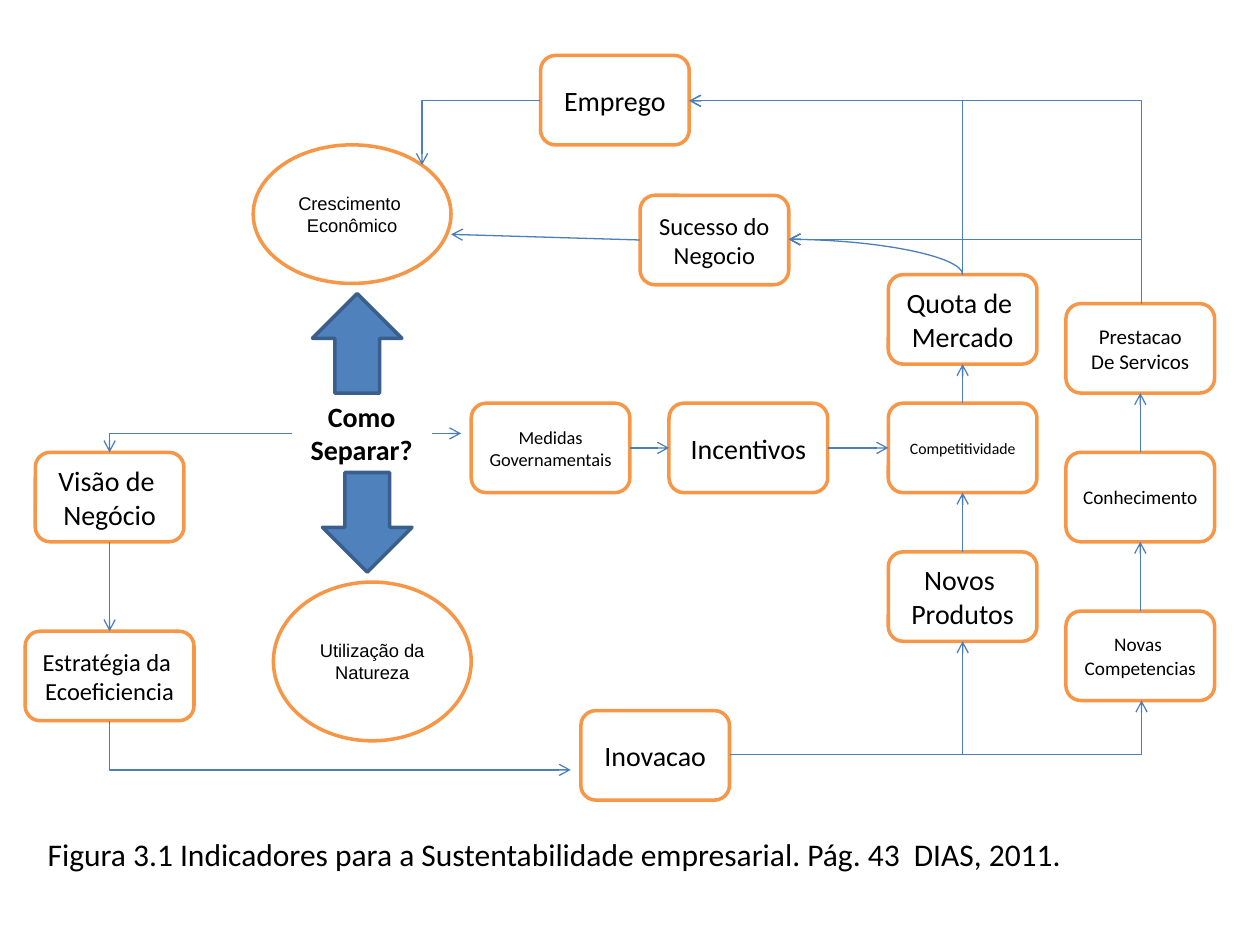
"""Build the slide of sustainability indicators as a flow diagram."""
import dataclasses
from typing import Optional

import lxml.etree
import pptx
import pptx.dml.color
import pptx.enum.shapes
import pptx.enum.text
import pptx.oxml.ns
import pptx.util

Inches = pptx.util.Inches
MSO_SHAPE = pptx.enum.shapes.MSO_SHAPE
MSO_CONNECTOR = pptx.enum.shapes.MSO_CONNECTOR
PP_ALIGN = pptx.enum.text.PP_ALIGN
MSO_ANCHOR = pptx.enum.text.MSO_ANCHOR
TOP, LEFT, BOTTOM, RIGHT = range(4)


@dataclasses.dataclass(frozen=True)
class Theme:
    """Colours, fonts, type sizes and line widths."""
    paper: str = "FFFFFF"
    ink: str = "000000"
    orange: str = "F79646"
    blue: str = "4F81BD"
    navy: str = "3A5F8C"
    link: str = "4B7EBC"
    body_font: str = "Calibri"
    oval_font: str = "Arial"
    caption: float = 18
    large: float = 16
    medium: float = 14
    regular: float = 12
    small: float = 11
    compact: float = 10.5
    tiny: float = 9
    outline: float = 2
    thin: float = 0.75


THEME = Theme()


@dataclasses.dataclass(frozen=True)
class Node:
    """An outlined shape with centred text."""
    text: str
    x: float
    y: float
    size: float = THEME.large
    w: float = 1.18
    h: float = 0.71
    kind: MSO_SHAPE = MSO_SHAPE.ROUNDED_RECTANGLE
    font: str = THEME.body_font


@dataclasses.dataclass(frozen=True)
class Link:
    """A straight arrow between two nodes or from a node to a point."""
    start: str
    start_side: int
    end: Optional[str] = None
    end_side: int = LEFT
    point: tuple[float, float] = (0, 0)


@dataclasses.dataclass(frozen=True)
class Bend:
    """An arrow with one corner, leaving vertically or horizontally."""
    x1: float
    y1: float
    x2: float
    y2: float
    vertical: bool = True
    preset: str = "bentConnector2"


COL_A, COL_B = 7.05, 8.46
MID_VISION, MID_A, MID_B = 0.87, 7.64, 9.06
ROW_JOB, ROW_SUCCESS, ROW_SPLIT, ROW_INNOVATION = 0.8, 1.9, 3.44, 5.99
SUCCESS_RIGHT, JOB_RIGHT, INNOVATION_RIGHT = 6.26, 5.47, 5.79

NODES = {
    "growth": Node("Crescimento \nEconômico", 2.01, 1.15, THEME.compact, 1.57, 1.1,
                   MSO_SHAPE.OVAL, THEME.oval_font),
    "nature": Node("Utilização da\nNatureza", 2.17, 4.62, THEME.compact, 1.57, 1.26,
                   MSO_SHAPE.OVAL, THEME.oval_font),
    "vision": Node("Visão de \nNegócio", 0.28, 3.59),
    "strategy": Node("Estratégia da \nEcoeficiencia", 0.2, 5.01, THEME.medium, 1.34),
    "innovation": Node("Inovacao", 4.61, 5.64),
    "incentives": Node("Incentivos", 5.31, 3.2, w=1.26),
    "measures": Node("Medidas\nGovernamentais", 3.74, 3.2, THEME.compact, 1.26),
    "products": Node("Novos \nProdutos", COL_A, 4.38),
    "share": Node("Quota de \nMercado", COL_A, 2.18),
    "competitiveness": Node("Competitividade", COL_A, 3.2, THEME.tiny),
    "services": Node("Prestacao\nDe Servicos", COL_B, 2.41, THEME.regular),
    "knowledge": Node("Conhecimento", COL_B, 3.59, THEME.small),
    "skills": Node("Novas \nCompetencias", COL_B, 4.85, THEME.small),
    "job": Node("Emprego", 4.29, 0.44),
    "success": Node("Sucesso do\nNegocio", 5.08, 1.55, THEME.medium),
}

LINKS = [
    Link("success", LEFT, point=(3.58, 1.86)),
    Link("measures", RIGHT, "incentives", LEFT),
    Link("incentives", RIGHT, "competitiveness", LEFT),
    Link("products", TOP, "competitiveness", BOTTOM),
    Link("competitiveness", TOP, "share", BOTTOM),
    Link("knowledge", TOP, "services", BOTTOM),
    Link("skills", TOP, "knowledge", BOTTOM),
    Link("vision", BOTTOM, "strategy", TOP),
]

BENDS = [
    Bend(MID_VISION, 5.72, 4.53, 6.11),
    Bend(INNOVATION_RIGHT, ROW_INNOVATION, MID_A, 5.09, False),
    Bend(INNOVATION_RIGHT, ROW_INNOVATION, MID_B, 5.56, False),
    Bend(MID_B, 2.41, JOB_RIGHT, ROW_JOB),
    Bend(MID_B, 2.41, SUCCESS_RIGHT, ROW_SUCCESS),
    Bend(MID_A, 2.18, SUCCESS_RIGHT, ROW_SUCCESS),
    Bend(4.29, ROW_JOB, 3.35, 1.31, False),
    Bend(2.32, ROW_SPLIT, MID_VISION, 3.59, False),
    Bend(MID_A, 2.18, JOB_RIGHT, ROW_JOB),
    Bend(MID_A, 2.18, SUCCESS_RIGHT, ROW_SUCCESS, preset="curvedConnector2"),
]


def rgb(code: str) -> pptx.dml.color.RGBColor:
    """Turn a hex code into a colour."""
    return pptx.dml.color.RGBColor.from_string(code)


def write(tf, text: str, size: float, font: str = THEME.body_font,
          align=PP_ALIGN.CENTER, bold: bool = False) -> None:
    """Fill a text frame and format its runs."""
    tf.text = text
    tf.word_wrap = True
    for p in tf.paragraphs:
        p.alignment = align
        for r in p.runs:
            r.font.name, r.font.size, r.font.bold = font, pptx.util.Pt(size), bold
            r.font.color.rgb = rgb(THEME.ink)


def add_shape(s, kind, x: float, y: float, w: float, h: float, fill: str, line: str):
    """Draw a filled and outlined preset shape."""
    sp = s.shapes.add_shape(kind, Inches(x), Inches(y), Inches(w), Inches(h))
    sp.shadow.inherit = False
    sp.fill.solid()
    sp.fill.fore_color.rgb = rgb(fill)
    sp.line.color.rgb = rgb(line)
    sp.line.width = pptx.util.Pt(THEME.outline)
    return sp


def add_node(s, node: Node):
    """Draw a node with its text."""
    sp = add_shape(s, node.kind, node.x, node.y, node.w, node.h, THEME.paper, THEME.orange)
    sp.text_frame.vertical_anchor = MSO_ANCHOR.MIDDLE
    write(sp.text_frame, node.text, node.size, node.font)
    return sp


def add_label(s, x: float, y: float, w: float, h: float, text: str, size: float, **style) -> None:
    """Place a text box."""
    sp = s.shapes.add_textbox(Inches(x), Inches(y), Inches(w), Inches(h))
    write(sp.text_frame, text, size, **style)


def add_arrow(s, kind, x1: float, y1: float, x2: float, y2: float):
    """Draw a thin connector with an open arrowhead."""
    c = s.shapes.add_connector(kind, Inches(x1), Inches(y1), Inches(x2), Inches(y2))
    c.line.color.rgb = rgb(THEME.link)
    c.line.width = pptx.util.Pt(THEME.thin)
    qn = pptx.oxml.ns.qn
    lxml.etree.SubElement(c.line._get_or_add_ln(), qn("a:tailEnd"), type="arrow")
    lxml.etree.SubElement(c._element.spPr, qn("a:effectLst"))
    return c


def add_link(s, link: Link, shapes: dict) -> None:
    """Draw a straight arrow joined to its nodes."""
    c = add_arrow(s, MSO_CONNECTOR.STRAIGHT, *link.point, *link.point)
    c.begin_connect(shapes[link.start], link.start_side)
    if link.end:
        c.end_connect(shapes[link.end], link.end_side)


def add_bend(s, b: Bend) -> None:
    """Draw a one-corner arrow, turned a quarter when it leaves vertically."""
    cx, cy = (b.x1 + b.x2) / 2, (b.y1 + b.y2) / 2
    dx, dy = (b.x2 - b.x1) / 2, (b.y2 - b.y1) / 2
    if b.vertical:
        dx, dy = -dy, dx
    c = add_arrow(s, MSO_CONNECTOR.ELBOW, cx - dx, cy - dy, cx + dx, cy + dy)
    spPr = c._element.spPr
    spPr.find(pptx.oxml.ns.qn("a:prstGeom")).set("prst", b.preset)
    if b.vertical:
        spPr.find(pptx.oxml.ns.qn("a:xfrm")).set("rot", str(270 * 60000))


def main() -> None:
    """Build and save the slide."""
    prs = pptx.Presentation()
    prs.slide_width, prs.slide_height = Inches(10), Inches(7.5)
    s = prs.slides.add_slide(prs.slide_layouts[6])
    add_label(s, 0.28, 6.58, 8.7, 0.4,
              "Figura 3.1 Indicadores para a Sustentabilidade empresarial. Pág. 43  DIAS, 2011.",
              THEME.caption, align=PP_ALIGN.LEFT)
    for kind, x, y in ((MSO_SHAPE.DOWN_ARROW, 2.56, 3.75), (MSO_SHAPE.UP_ARROW, 2.48, 2.33)):
        add_shape(s, kind, x, y, 0.71, 0.79, THEME.blue, THEME.navy)
    add_label(s, 2.32, 3.12, 1.1, 0.64, "Como Separar?", THEME.large, bold=True)
    shapes = {name: add_node(s, node) for name, node in NODES.items()}
    for link in LINKS:
        add_link(s, link, shapes)
    add_arrow(s, MSO_CONNECTOR.STRAIGHT, 3.43, ROW_SPLIT, 3.66, ROW_SPLIT)
    for bend in BENDS:
        add_bend(s, bend)
    prs.save("out.pptx")


if __name__ == "__main__":
    main()
